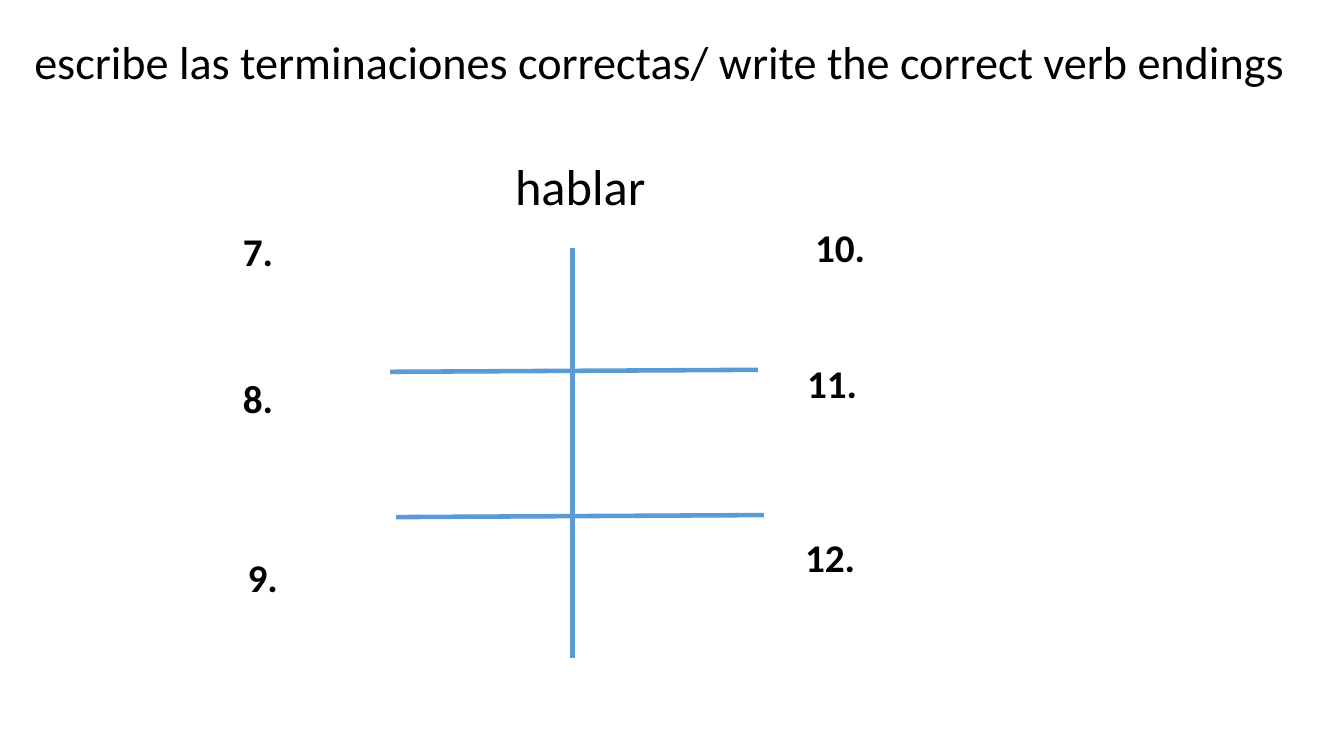
from dataclasses import dataclass

from lxml import etree
from pptx import Presentation
from pptx.dml.color import RGBColor
from pptx.enum.shapes import MSO_CONNECTOR
from pptx.enum.text import MSO_ANCHOR, MSO_AUTO_SIZE, PP_ALIGN
from pptx.oxml.ns import qn
from pptx.util import Cm, Pt

STRAIGHT = MSO_CONNECTOR.STRAIGHT
TOP = MSO_ANCHOR.TOP
LEFT = PP_ALIGN.LEFT
GROW = MSO_AUTO_SIZE.SHAPE_TO_FIT_TEXT
TITLE_ONLY = 5


@dataclass(frozen=True)
class Theme:
    font: str = "Calibri"
    ink: RGBColor = RGBColor(0x00, 0x00, 0x00)
    rule: RGBColor = RGBColor(0x5B, 0x9B, 0xD5)
    title: float = 33
    verb: float = 36
    label: float = 28
    stem: float = 3
    bar: float = 3.25


THEME = Theme()

# Label, left and top of each numbered blank, in cm
LABELS = [
    ("7.", 5.87, 5.61),
    ("8.", 5.87, 9.3),
    ("9.", 5.99, 13.82),
    ("10.", 20.29, 5.51),
    ("11.", 20.09, 8.92),
    ("12.", 20.04, 13.31),
]

# Left and top of each slightly rising bar, in cm
BARS = [(9.83, 9.37), (9.98, 13.03)]
BAR_LEN, BAR_RISE = 9.27, 0.05


def put_text(shape, text, size, bold=False, wrap=True):
    """Fill a shape with one formatted line of text."""
    frame = shape.text_frame
    frame.word_wrap = wrap
    frame.auto_size = GROW
    frame.vertical_anchor = TOP
    para = frame.paragraphs[0]
    para.alignment = LEFT
    run = para.add_run()
    run.text = text
    font = run.font
    font.name = THEME.font
    font.size = Pt(size)
    font.bold = bold
    font.color.rgb = THEME.ink


def add_title(slide, text):
    title = slide.shapes.title
    title.left, title.top = Cm(0.61), Cm(0.71)
    title.width, title.height = Cm(33.53), Cm(1.68)
    put_text(title, text, THEME.title)


def add_text(slide, text, x, y, w, h, **style):
    box = slide.shapes.add_textbox(Cm(x), Cm(y), Cm(w), Cm(h))
    put_text(box, text, **style)


def add_line(slide, x1, y1, x2, y2, width):
    line = slide.shapes.add_connector(
        STRAIGHT, Cm(x1), Cm(y1), Cm(x2), Cm(y2))
    line.line.color.rgb = THEME.rule
    line.line.width = Pt(width)
    # An empty effect list turns the shadow off
    etree.SubElement(line._element.spPr, qn("a:effectLst"))


def main():
    deck = Presentation()
    deck.slide_width, deck.slide_height = Cm(33.87), Cm(19.05)
    slide = deck.slides.add_slide(deck.slide_layouts[TITLE_ONLY])

    # Verb grid
    add_line(slide, 14.43, 6.25, 14.43, 16.59, THEME.stem)
    for x, y in BARS:
        add_line(slide, x, y, x + BAR_LEN, y - BAR_RISE, THEME.bar)

    # Heading and verb
    add_title(slide, "escribe las terminaciones correctas/ "
                     "write the correct verb endings")
    add_text(slide, "hablar", 12.73, 3.78, 3.84, 1.8,
             size=THEME.verb, wrap=False)

    # Numbered blanks
    for text, x, y in LABELS:
        add_text(slide, text, x, y, 1.8, 1.45, size=THEME.label, bold=True)

    deck.save("out.pptx")


if __name__ == "__main__":
    main()
